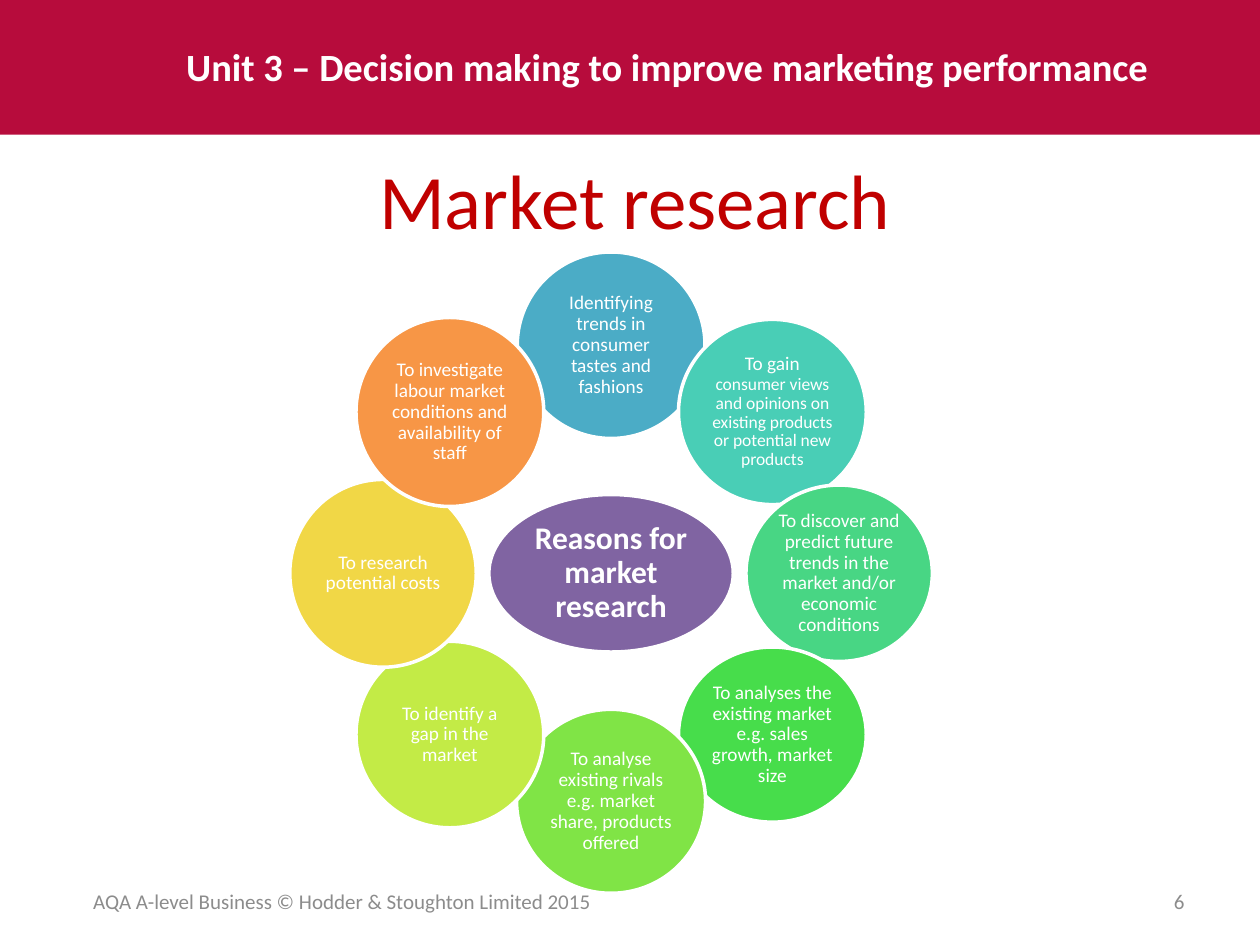
"""Build the market research slide with its ring of reasons."""
from math import cos, pi, sin

from pptx import Presentation
from pptx.dml.color import RGBColor
from pptx.enum.shapes import MSO_SHAPE as Shape
from pptx.enum.text import MSO_ANCHOR as Anchor, PP_ALIGN as Align
from pptx.util import Inches, Pt

COLORS = {
    "banner": "B70C3C", "title": "C00000", "white": "FFFFFF", "footer": "8C8C8C",
    "hub": "8064A2", "blue": "4BACC6", "teal": "49CEB6", "mint": "48D684",
    "green": "47DD4B", "leaf": "80E446", "lime": "C3EB46", "yellow": "F1D746",
    "orange": "F79646",
}
REASONS = [
    ("blue", 1.49, 1.48, [("Identifying trends in consumer tastes and fashions", 11)]),
    ("teal", 1.49, 1.47, [("To gain ", 11), (
        "consumer views and opinions on existing products or potential new products", 10)]),
    ("mint", 1.48, 1.40, [(
        "To discover and predict future trends in the market and/or economic conditions", 11)]),
    ("green", 1.49, 1.39, [(
        "To analyses the existing market e.g. sales growth, market size", 11)]),
    ("leaf", 1.50, 1.46, [(
        "To analyse existing rivals e.g. market share, products offered", 11)]),
    ("lime", 1.49, 1.48, [("To identify a gap in the market", 11)]),
    ("yellow", 1.48, 1.49, [("To research potential costs", 11)]),
    ("orange", 1.49, 1.50, [(
        "To investigate labour market conditions and availability of staff", 11)]),
]
HUB = [("Reasons for market research", 18)]
LABELS = [
    ((1.38, 0.29, 8.03, 0.47), [("Unit 3 – Decision making to improve marketing performance", 22)],
     {"color": "white", "bold": True, "align": Align.LEFT, "anchor": Anchor.TOP}),
    ((0.08, 0.99, 9.92, 1.18), [("Market research", 44)], {"color": "title"}),
    ((0.51, 6.95, 4.41, 0.4), [("AQA A-level Business © Hodder & Stoughton Limited 2015", 12)],
     {"color": "footer"}),
    ((7.17, 6.95, 2.33, 0.4), [("6", 12)], {"color": "footer", "align": Align.RIGHT}),
]
CENTER_X, CENTER_Y, RADIUS = 4.85, 4.55, 1.81


def rgb(name):
    return RGBColor.from_string(COLORS[name])


def write(box, pieces, color="white", bold=False, align=Align.CENTER,
          anchor=Anchor.MIDDLE, inset=None, spacing=None):
    frame = box.text_frame
    frame.word_wrap = True
    frame.vertical_anchor = anchor
    if inset is not None:
        frame.margin_left = frame.margin_right = Inches(inset)
        frame.margin_top = frame.margin_bottom = Inches(inset)
    para = frame.paragraphs[0]
    para.alignment = align
    para.line_spacing = spacing
    for text, size in pieces:
        span = para.add_run()
        span.text = text
        span.font.name = "Calibri"
        span.font.size = Pt(size)
        span.font.bold = bold
        span.font.color.rgb = rgb(color)


def add_filled(page, kind, area, color):
    shape = page.shapes.add_shape(kind, *map(Inches, area))
    shape.shadow.inherit = False
    shape.fill.solid()
    shape.fill.fore_color.rgb = rgb(color)
    shape.line.fill.background()
    return shape


def add_bubble(page, center, size, color, pieces, **text_format):
    (x, y), (width, height) = center, size
    area = (x - width / 2, y - height / 2, width, height)
    bubble = add_filled(page, Shape.OVAL, area, color)
    bubble.line.color.rgb = rgb("white")
    bubble.line.width = Pt(2)
    write(bubble, pieces, spacing=0.9, **text_format)


def main():
    deck = Presentation()
    deck.slide_width, deck.slide_height = Inches(10), Inches(7.5)
    page = deck.slides.add_slide(deck.slide_layouts[6])
    add_filled(page, Shape.RECTANGLE, (0, 0, 10, 1.07), "banner")
    for area, pieces, text_format in LABELS:
        write(page.shapes.add_textbox(*map(Inches, area)), pieces, **text_format)

    add_bubble(page, (CENTER_X, CENTER_Y), (1.94, 1.25), "hub", HUB, bold=True, inset=0.03)
    for index, (color, width, height, pieces) in enumerate(REASONS):
        angle = 2 * pi * index / len(REASONS)
        center = (CENTER_X + RADIUS * sin(angle), CENTER_Y - RADIUS * cos(angle))
        add_bubble(page, center, (width, height), color, pieces, inset=0.02)
    deck.save("out.pptx")


if __name__ == "__main__":
    main()
